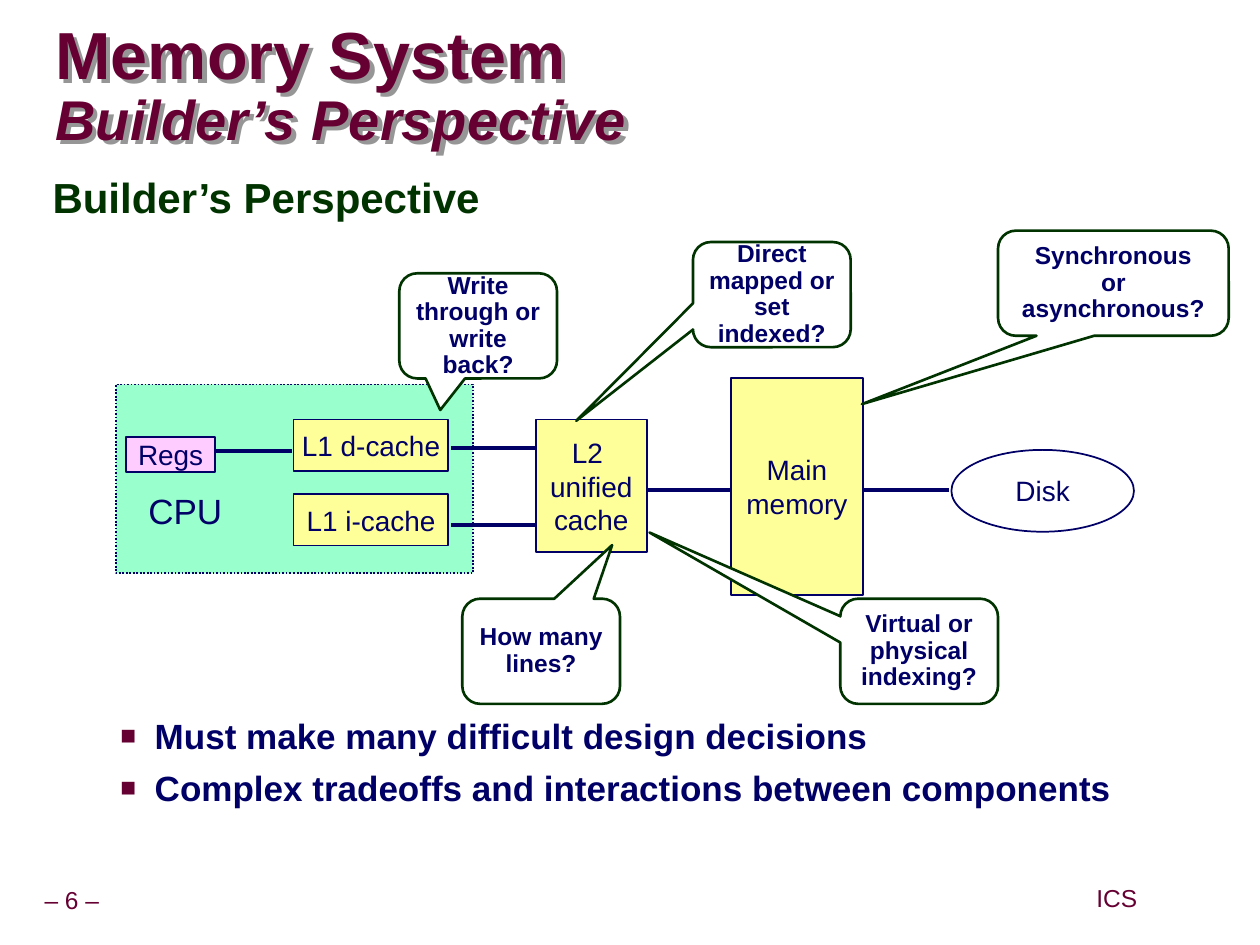
from dataclasses import dataclass

from lxml import etree
from pptx import Presentation
from pptx.dml.color import RGBColor
from pptx.enum.dml import MSO_LINE
from pptx.enum.shapes import MSO_CONNECTOR, MSO_SHAPE
from pptx.enum.text import MSO_ANCHOR, PP_ALIGN
from pptx.oxml.ns import qn
from pptx.util import Cm, Pt

RECTANGLE, ELLIPSE = MSO_SHAPE.RECTANGLE, MSO_SHAPE.OVAL
CALLOUT = MSO_SHAPE.ROUNDED_RECTANGULAR_CALLOUT
STRAIGHT, DOTTED = MSO_CONNECTOR.STRAIGHT, MSO_LINE.ROUND_DOT
TOP, MIDDLE = MSO_ANCHOR.TOP, MSO_ANCHOR.MIDDLE
LEFT, CENTER = PP_ALIGN.LEFT, PP_ALIGN.CENTER


@dataclass(frozen=True)
class Theme:
    font: str = "Arial"
    maroon: str = "660033"
    green: str = "003300"
    navy: str = "000066"
    white: str = "FFFFFF"
    mint: str = "99FFCC"
    yellow: str = "FFFF99"
    pink: str = "FFCCFF"
    shadow: str = "969696"
    title: int = 38
    subtitle: int = 32
    heading: int = 24
    body: int = 20
    label: int = 16
    note: int = 14


THEME = Theme()


@dataclass(frozen=True)
class Place:
    """Left, top, width and height in centimetres."""
    left: float
    top: float
    width: float
    height: float

    def lengths(self) -> list:
        return [Cm(value) for value in (self.left, self.top, self.width, self.height)]


@dataclass(frozen=True)
class TextStyle:
    size: int
    color: str
    bold: bool = False
    align: PP_ALIGN = CENTER
    anchor: MSO_ANCHOR = MIDDLE
    margins: tuple = (0.13, 0.13)
    wrap: bool = True
    spacing: float = 1.0
    after: int = 0


@dataclass(frozen=True)
class Component:
    place: Place
    fill: str
    lines: tuple = ()
    kind: MSO_SHAPE = RECTANGLE


@dataclass(frozen=True)
class Wire:
    start: float
    end: float
    y: float


@dataclass(frozen=True)
class Question:
    place: Place
    tip: tuple
    lines: tuple


LABEL = TextStyle(THEME.label, THEME.navy, margins=(0.2, 0.1), wrap=False)
NOTE = TextStyle(THEME.note, THEME.navy, bold=True, spacing=0.9)
FOOTER = TextStyle(THEME.note, THEME.maroon, wrap=False, spacing=0.9)
CPU_LABEL = TextStyle(THEME.body, THEME.navy, align=LEFT, anchor=TOP,
                      margins=(0.25, 0.13), wrap=False)
TITLE = TextStyle(THEME.title, THEME.maroon, bold=True, align=LEFT,
                  margins=(0, 0), spacing=0.87)
HEADING = TextStyle(THEME.heading, THEME.green, bold=True, align=LEFT, anchor=TOP,
                    margins=(0.25, 0.13), spacing=0.95)
BULLETS = TextStyle(THEME.body, THEME.navy, bold=True, align=LEFT, anchor=TOP,
                    margins=(0.25, 0.13), after=6)

CPU = Component(Place(2.34, 7.75, 7.19, 3.81), THEME.mint)
COMPONENTS = (
    Component(Place(14.73, 7.62, 2.67, 4.37), THEME.yellow, ("Main", "memory")),
    Component(Place(19.18, 9.07, 3.68, 1.65), THEME.white, ("Disk",), ELLIPSE),
    Component(Place(5.92, 9.96, 3.12, 1.04), THEME.yellow, ("L1 i-cache",)),
    Component(Place(5.92, 8.46, 3.12, 1.04), THEME.yellow, ("L1 d-cache",)),
    Component(Place(2.54, 8.81, 1.8, 0.71), THEME.pink, ("Regs",)),
    Component(Place(10.8, 8.46, 2.24, 2.67), THEME.yellow, ("L2 ", "unified", "cache")),
)
WIRES = (
    Wire(4.34, 5.89, 9.09),
    Wire(9.09, 10.82, 9.04),
    Wire(9.09, 10.82, 10.59),
    Wire(13.03, 14.76, 9.88),
    Wire(17.4, 19.13, 9.88),
)
QUESTIONS = (
    Question(Place(8.05, 5.51, 3.18, 2.12), (-0.24, 0.8), ("Write through or write back?",)),
    Question(Place(13.97, 4.88, 3.18, 2.12), (-1.24, 1.2), ("Direct mapped or set indexed?",)),
    Question(Place(9.32, 12.07, 3.18, 2.12), (0.45, -1.01), ("How many lines?",)),
    Question(Place(16.94, 12.07, 3.18, 2.12), (-1.71, -1.13), ("Virtual or physical indexing?",)),
    Question(Place(20.12, 4.65, 4.65, 2.12), (-1.09, 1.15),
             ("Synchronous", "or", "asynchronous?")),
)


def set_values(target, values: dict) -> None:
    for name, value in values.items():
        setattr(target, name, value)


def format_font(font, style: TextStyle) -> None:
    set_values(font, {"name": THEME.font, "size": Pt(style.size), "bold": style.bold})
    font.color.rgb = RGBColor.from_string(style.color)


def write(shape, lines: tuple, style: TextStyle) -> None:
    frame = shape.text_frame
    side, edge = (Cm(margin) for margin in style.margins)
    set_values(frame, {"word_wrap": style.wrap, "vertical_anchor": style.anchor,
                       "margin_left": side, "margin_right": side,
                       "margin_top": edge, "margin_bottom": edge})
    for index, line in enumerate(lines):
        paragraph = frame.add_paragraph() if index else frame.paragraphs[0]
        set_values(paragraph, {"alignment": style.align, "line_spacing": style.spacing,
                               "space_after": Pt(style.after)})
        run = paragraph.add_run()
        run.text = line
        format_font(run.font, style)


def add_text(slide, place: Place, lines: tuple, style: TextStyle):
    box = slide.shapes.add_textbox(*place.lengths())
    write(box, lines, style)
    return box


def add_outlined(slide, kind: MSO_SHAPE, place: Place, fill: str, line: str, width: float):
    shape = slide.shapes.add_shape(kind, *place.lengths())
    shape.shadow.inherit = False
    shape.fill.solid()
    shape.fill.fore_color.rgb = RGBColor.from_string(fill)
    shape.line.color.rgb = RGBColor.from_string(line)
    shape.line.width = Pt(width)
    return shape


def add_component(slide, component: Component):
    shape = add_outlined(slide, component.kind, component.place, component.fill, THEME.navy, 1)
    write(shape, component.lines, LABEL)
    return shape


def add_wire(slide, wire: Wire) -> None:
    connector = slide.shapes.add_connector(
        STRAIGHT, Cm(wire.start), Cm(wire.y), Cm(wire.end), Cm(wire.y))
    connector.line.color.rgb = RGBColor.from_string(THEME.navy)
    connector.line.width = Pt(2.25)
    etree.SubElement(connector._element.spPr, qn("a:effectLst"))


def add_question(slide, question: Question) -> None:
    shape = add_outlined(slide, CALLOUT, question.place, THEME.white, THEME.green, 1.5)
    for index, value in enumerate((*question.tip, 0.17)):
        shape.adjustments[index] = value
    write(shape, question.lines, NOTE)


def add_title(slide) -> None:
    box = add_text(slide, Place(1.12, 0.69, 24.21, 2.16), ("Memory System",), TITLE)
    paragraph = box.text_frame.paragraphs[0]
    paragraph.add_line_break()
    run = paragraph.add_run()
    run.text = "Builder’s Perspective"
    format_font(run.font, TITLE)
    set_values(run.font, {"size": Pt(THEME.subtitle), "italic": True})
    effects = etree.SubElement(box._element.spPr, qn("a:effectLst"))
    shadow = etree.SubElement(effects, qn("a:outerShdw"), dist=str(Cm(0.12)),
                              dir="2700000", algn="ctr", rotWithShape="0")
    etree.SubElement(shadow, qn("a:srgbClr"), val=THEME.shadow)


def add_bullets(slide, place: Place, lines: tuple) -> None:
    box = add_text(slide, place, lines, BULLETS)
    for paragraph in box.text_frame.paragraphs:
        properties = paragraph._p.get_or_add_pPr()
        properties.set("marL", str(Cm(2.06)))
        properties.set("indent", str(Cm(-0.69)))
        color = etree.SubElement(properties, qn("a:buClr"))
        etree.SubElement(color, qn("a:srgbClr"), val=THEME.maroon)
        etree.SubElement(properties, qn("a:buSzPct"), val="75000")
        etree.SubElement(properties, qn("a:buFont"), typeface=THEME.font)
        etree.SubElement(properties, qn("a:buChar"), char="■")


def main() -> None:
    presentation = Presentation()
    set_values(presentation, {"slide_width": Cm(25.4), "slide_height": Cm(19.05)})
    slide = presentation.slides.add_slide(presentation.slide_layouts[6])

    add_text(slide, Place(0.61, 17.78, 1.68, 0.79), ("– 6 –",), FOOTER)
    add_text(slide, Place(21.97, 17.75, 1.09, 0.79), ("ICS",), FOOTER)
    add_title(slide)
    add_text(slide, Place(0.81, 3.4, 23.09, 1.2), ("Builder’s Perspective",), HEADING)
    add_bullets(slide, Place(0.81, 14.27, 23.09, 2.4),
                ("Must make many difficult design decisions",
                 "Complex tradeoffs and interactions between components"))

    add_component(slide, CPU).line.dash_style = DOTTED
    for component in COMPONENTS:
        add_component(slide, component)
    for wire in WIRES:
        add_wire(slide, wire)
    add_text(slide, Place(2.74, 9.73, 2.01, 1.09), ("CPU",), CPU_LABEL)
    for question in QUESTIONS:
        add_question(slide, question)
    presentation.save("out.pptx")


if __name__ == "__main__":
    main()
